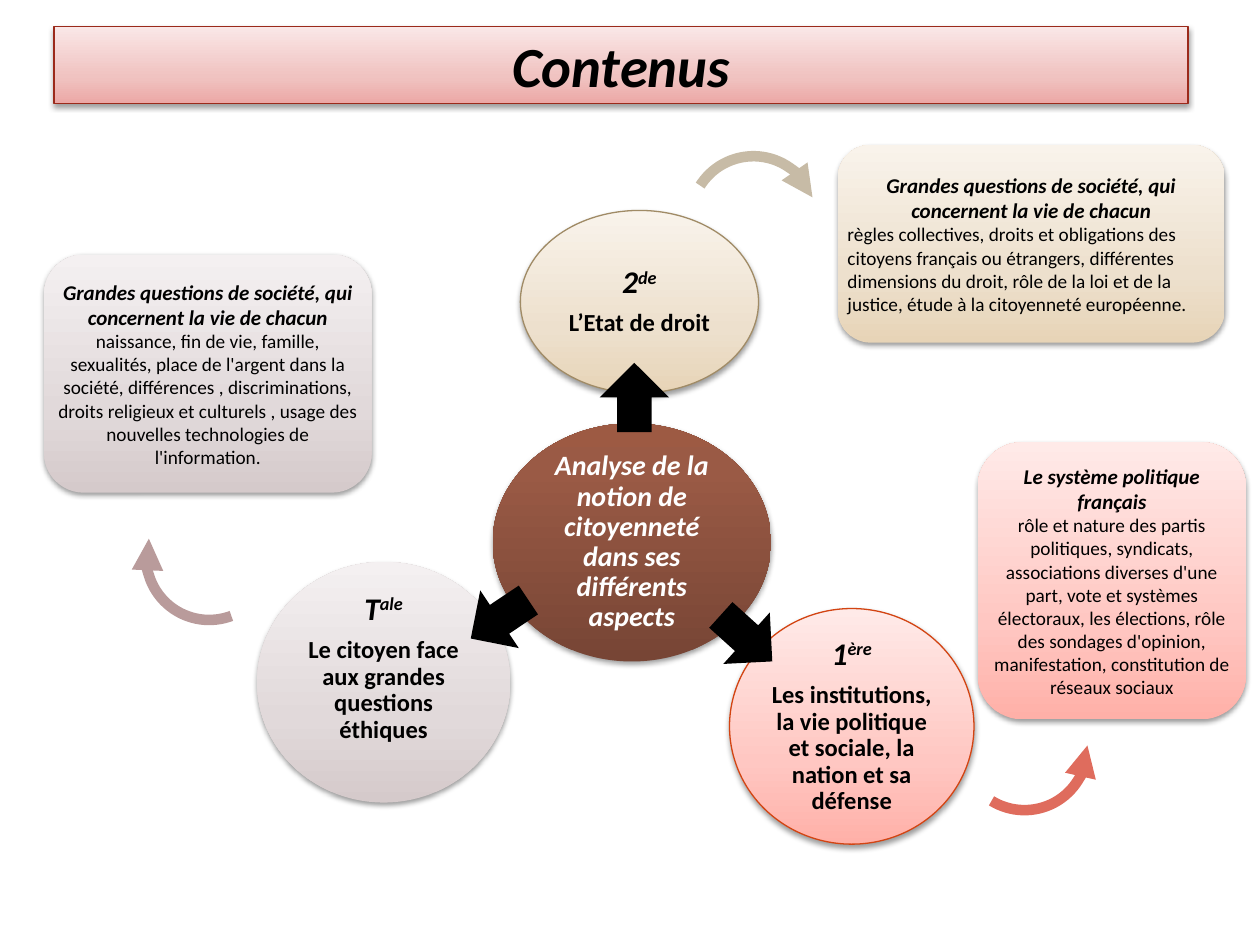
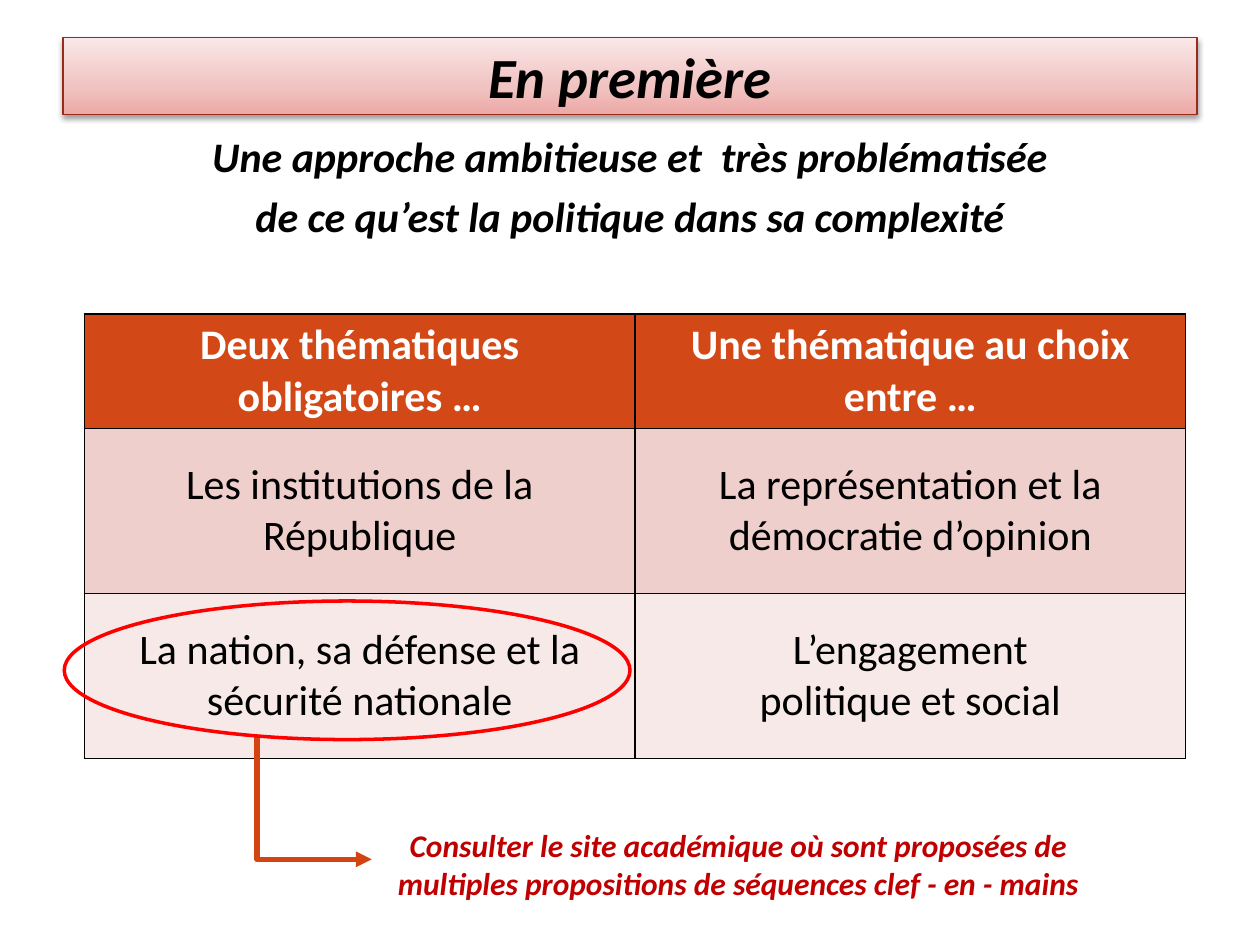
from dataclasses import dataclass

from lxml import etree
from pptx import Presentation
from pptx.dml.color import RGBColor
from pptx.enum.shapes import MSO_SHAPE
from pptx.enum.text import MSO_ANCHOR, PP_ALIGN
from pptx.oxml.ns import qn
from pptx.util import Inches, Pt

RECT, OVAL, ARC = MSO_SHAPE.RECTANGLE, MSO_SHAPE.OVAL, MSO_SHAPE.ARC
CARD, UP_ARROW = MSO_SHAPE.ROUNDED_RECTANGLE, MSO_SHAPE.UP_ARROW
CENTER, LEFT = PP_ALIGN.CENTER, PP_ALIGN.LEFT
MIDDLE, TOP = MSO_ANCHOR.MIDDLE, MSO_ANCHOR.TOP


@dataclass(frozen=True)
class Theme:
    font: str = "Calibri"
    black: str = "000000"
    white: str = "FFFFFF"
    orange: str = "D34412"
    header: str = "D34817"
    table_rows: tuple = ("EFCFCC", "F7E9E8")
    note: str = "C00000"
    highlight: str = "FF0000"
    title_line: str = "9B2A1B"
    sand_line: str = "A08B66"
    # Gradients run from bottom to top: (position in %, colour)
    title_fill: tuple = ((0, "ECA8A6"), (35, "F0C3C1"), (100, "FAE7E7"))
    sand: tuple = ((0, "E7D4B7"), (35, "EDE0CD"), (100, "F9F3EB"))
    rose: tuple = ((0, "FFB0A8"), (35, "FFC7C2"), (100, "FFEAE8"))
    grey: tuple = ((0, "D5CACB"), (35, "E1D9DA"), (100, "F4F0F1"))
    brown: tuple = ((0, "774535"), (80, "9A5A45"), (100, "9D5A43"))
    sand_arc: str = "C7BBA6"
    rose_arc: str = "DF6C5D"
    grey_arc: str = "B99B9B"
    title_size: float = 32.4
    large: int = 24
    level: int = 18
    core: int = 16
    topic: int = 14
    card_head: int = 12
    card_body: int = 11


THEME = Theme()


def rgb(color):
    return RGBColor.from_string(color)


def add_paragraph(frame, text, *, size, color=THEME.black, bold=False, italic=False,
                  align=CENTER, spacing=None, before=0, after=0, superscript=""):
    """Fill the frame's empty first paragraph, or append a new one."""
    first = frame.paragraphs[0]
    paragraph = frame.add_paragraph() if first.runs else first
    paragraph.alignment = align
    paragraph.space_before, paragraph.space_after = Pt(before), Pt(after)
    if spacing:
        paragraph.line_spacing = spacing
    for part in filter(None, (text, superscript)):
        run = paragraph.add_run()
        run.text = part
        run.font.name, run.font.size = THEME.font, Pt(size)
        run.font.bold, run.font.italic = bold, italic
        run.font.color.rgb = rgb(color)
    if superscript:
        run.font._element.set("baseline", "30000")


def prepare_frame(shape, inset=(0.1, 0.05, 0.1, 0.05), anchor=MIDDLE):
    frame = shape.text_frame
    frame.word_wrap = True
    frame.vertical_anchor = anchor
    (frame.margin_left, frame.margin_top,
     frame.margin_right, frame.margin_bottom) = map(Inches, inset)
    return frame


def fill_gradient(shape, stops):
    shape.fill.gradient()
    shape.fill.gradient_angle = 90
    stop_list = shape._element.spPr.find(qn("a:gradFill")).find(qn("a:gsLst"))
    for default_stop in list(stop_list):
        stop_list.remove(default_stop)
    for position, color in stops:
        stop = etree.SubElement(stop_list, qn("a:gs"), pos=str(position * 1000))
        etree.SubElement(stop, qn("a:srgbClr"), val=color)


def add_shadow(shape):
    effects = shape._element.spPr.find(qn("a:effectLst"))
    shadow = etree.SubElement(effects, qn("a:outerShdw"), blurRad="40000", dist="20000",
                              dir="5400000", rotWithShape="0")
    color = etree.SubElement(shadow, qn("a:srgbClr"), val=THEME.black)
    etree.SubElement(color, qn("a:alpha"), val="38000")


def style_shape(shape, fill=None, line=None, width=0.75):
    """Apply a solid colour or gradient stops as fill; gradients also get a shadow."""
    shape.shadow.inherit = False
    if fill is None:
        shape.fill.background()
    elif isinstance(fill, str):
        shape.fill.solid()
        shape.fill.fore_color.rgb = rgb(fill)
    else:
        fill_gradient(shape, fill)
        add_shadow(shape)
    if line:
        shape.line.color.rgb = rgb(line)
        shape.line.width = Pt(width)
    else:
        shape.line.fill.background()


def add_figure(slide, kind, box, rotation=0, **style):
    shape = slide.shapes.add_shape(kind, *map(Inches, box))
    shape.rotation = rotation
    style_shape(shape, **style)
    return shape


def add_title(slide, text, left, top):
    band = add_figure(slide, RECT, (left, top, 9, 0.61),
                      fill=THEME.title_fill, line=THEME.title_line)
    add_paragraph(prepare_frame(band), text, size=THEME.title_size, bold=True, italic=True)


def add_card(slide, box, fill, heading, body, body_align=CENTER):
    frame = prepare_frame(add_figure(slide, CARD, box, fill=fill), (0, 0, 0, 0))
    add_paragraph(frame, heading, size=THEME.card_head, bold=True, italic=True)
    add_paragraph(frame, body, size=THEME.card_body, align=body_align)


def add_level(slide, box, fill, level, suffix, topic, line=None, lift=0.0):
    """Draw a school level's circle; lift moves its text up."""
    circle = add_figure(slide, OVAL, box, fill=fill, line=line)
    frame = prepare_frame(circle, (0.02, 0.02, 0.02, 0.02 + lift))
    add_paragraph(frame, level, superscript=suffix, size=THEME.level, bold=True,
                  italic=True, spacing=0.9, after=6)
    add_paragraph(frame, topic, size=THEME.topic, bold=True, spacing=0.9, after=5)


def add_arrowhead(shape, end):
    etree.SubElement(shape.line._get_or_add_ln(), qn(f"a:{end}"), type="triangle")


def add_arc_arrow(slide, left, top, rotation, color, end="tailEnd", sweep_end=2.64):
    arc = add_figure(slide, ARC, (left, top, 1, 1), rotation, line=color, width=6)
    arc.adjustments[0] = 142.18
    arc.adjustments[1] = sweep_end
    add_arrowhead(arc, end)


def border_cell(cell):
    properties = cell._tc.get_or_add_tcPr()
    for index, side in enumerate(("lnL", "lnR", "lnT", "lnB")):
        border = etree.Element(qn(f"a:{side}"), w="12700")
        solid = etree.SubElement(border, qn("a:solidFill"))
        etree.SubElement(solid, qn("a:srgbClr"), val=THEME.black)
        properties.insert(index, border)


def add_themes_table(slide, rows):
    heights = (0.91, 1.31, 1.31)
    table = slide.shapes.add_table(len(rows), 2, Inches(0.67), Inches(2.49),
                                   Inches(8.74), Inches(sum(heights))).table
    fills = (THEME.header, *THEME.table_rows)
    for row_index, (texts, height, fill) in enumerate(zip(rows, heights, fills)):
        table.rows[row_index].height = Inches(height)
        is_header = row_index == 0
        for column, text in enumerate(texts):
            cell = table.cell(row_index, column)
            cell.vertical_anchor = MIDDLE
            cell.fill.solid()
            cell.fill.fore_color.rgb = rgb(fill)
            border_cell(cell)
            for line in text.split("\n"):
                add_paragraph(cell.text_frame, line, size=THEME.large, bold=is_header,
                              color=THEME.white if is_header else THEME.black)


def add_elbow_arrow(slide, points):
    start, *others = [(Inches(x), Inches(y)) for x, y in points]
    builder = slide.shapes.build_freeform(*start, scale=1.0)
    builder.add_line_segments(others, close=False)
    elbow = builder.convert_to_shape()
    style_shape(elbow, line=THEME.orange, width=3)
    add_arrowhead(elbow, "tailEnd")


def build_contents(slide):
    society = "Grandes questions de société, qui concernent la vie de chacun"
    add_title(slide, "Contenus", 0.43, 0.21)
    add_card(slide, (7.76, 3.51, 2.13, 2.2), THEME.rose, "Le système politique français",
             "rôle et nature des partis politiques, syndicats, associations diverses "
             "d'une part, vote et systèmes électoraux, les élections, rôle des sondages "
             "d'opinion, manifestation, constitution de réseaux sociaux")
    add_card(slide, (0.35, 2.02, 2.6, 1.89), THEME.grey, society,
             "naissance, fin de vie, famille, sexualités, place de l'argent dans la "
             "société, différences , discriminations, droits religieux et culturels , "
             "usage des nouvelles technologies de l'information.")
    add_card(slide, (6.65, 1.15, 3.07, 1.57), THEME.sand, society,
             "règles collectives, droits et obligations des citoyens français ou "
             "étrangers, différentes dimensions du droit, rôle de la loi et de la "
             "justice, étude à la citoyenneté européenne.", body_align=LEFT)

    core = add_figure(slide, OVAL, (3.91, 3.36, 2.21, 1.89), fill=THEME.brown)
    add_paragraph(prepare_frame(core, (0.03, 0.02, 0.03, 0.02)),
                  "Analyse de la notion de citoyenneté dans ses différents aspects",
                  size=THEME.core, color=THEME.white, bold=True, italic=True,
                  spacing=0.9, after=5)
    add_level(slide, (4.13, 1.67, 1.89, 1.45), THEME.sand, "2", "de",
              "L’Etat de droit", line=THEME.sand_line)
    add_level(slide, (5.79, 4.83, 1.94, 1.87), THEME.rose, "1", "ère",
              "Les institutions, la vie politique et sociale, la nation et sa défense",
              line=THEME.orange)
    add_level(slide, (2.04, 4.46, 2.01, 1.91), THEME.grey, "T", "ale",
              "Le citoyen face aux grandes questions éthiques", lift=0.22)

    add_arc_arrow(slide, 7.63, 5.43, 121.5, THEME.rose_arc, end="headEnd", sweep_end=0)
    add_arc_arrow(slide, 1.16, 3.92, 192.4, THEME.grey_arc)
    add_arc_arrow(slide, 5.48, 1.24, 335.3, THEME.sand_arc)
    for left, top, rotation in ((4.76, 2.88, 0), (5.65, 4.79, 132.1), (3.69, 4.64, 236.2)):
        add_figure(slide, UP_ARROW, (left, top, 0.55, 0.55), rotation, fill=THEME.black)


def build_premiere(slide):
    add_title(slide, "En première", 0.5, 0.3)
    approach = slide.shapes.add_textbox(*map(Inches, (0.5, 0.99, 9, 1.2)))
    frame = prepare_frame(approach, anchor=TOP)
    for line in ("Une approche ambitieuse et  très problématisée",
                 "de ce qu’est la politique dans sa complexité"):
        add_paragraph(frame, line, size=THEME.large, bold=True, italic=True, before=5)
    add_themes_table(slide, (
        ("Deux thématiques obligatoires …", "Une thématique au choix entre …"),
        ("Les institutions de la République",
         "La représentation et la démocratie d’opinion"),
        ("La nation, sa défense et la sécurité nationale",
         "L’engagement\npolitique et social"),
    ))
    advice = add_figure(slide, RECT, (2.87, 6.58, 5.98, 0.55), fill=THEME.white)
    add_paragraph(prepare_frame(advice),
                  "Consulter le site académique où sont proposées de multiples "
                  "propositions de séquences clef - en - mains",
                  size=THEME.level, color=THEME.note, bold=True, italic=True)
    add_elbow_arrow(slide, ((2.04, 5.84), (2.04, 6.82), (2.95, 6.82)))
    add_figure(slide, OVAL, (0.51, 4.77, 4.49, 1.1), line=THEME.highlight, width=2)


def main():
    deck = Presentation()
    deck.slide_width, deck.slide_height = Inches(10), Inches(7.5)
    blank = deck.slide_layouts[6]
    for build in (build_contents, build_premiere):
        build(deck.slides.add_slide(blank))
    deck.save("out.pptx")


if __name__ == "__main__":
    main()
